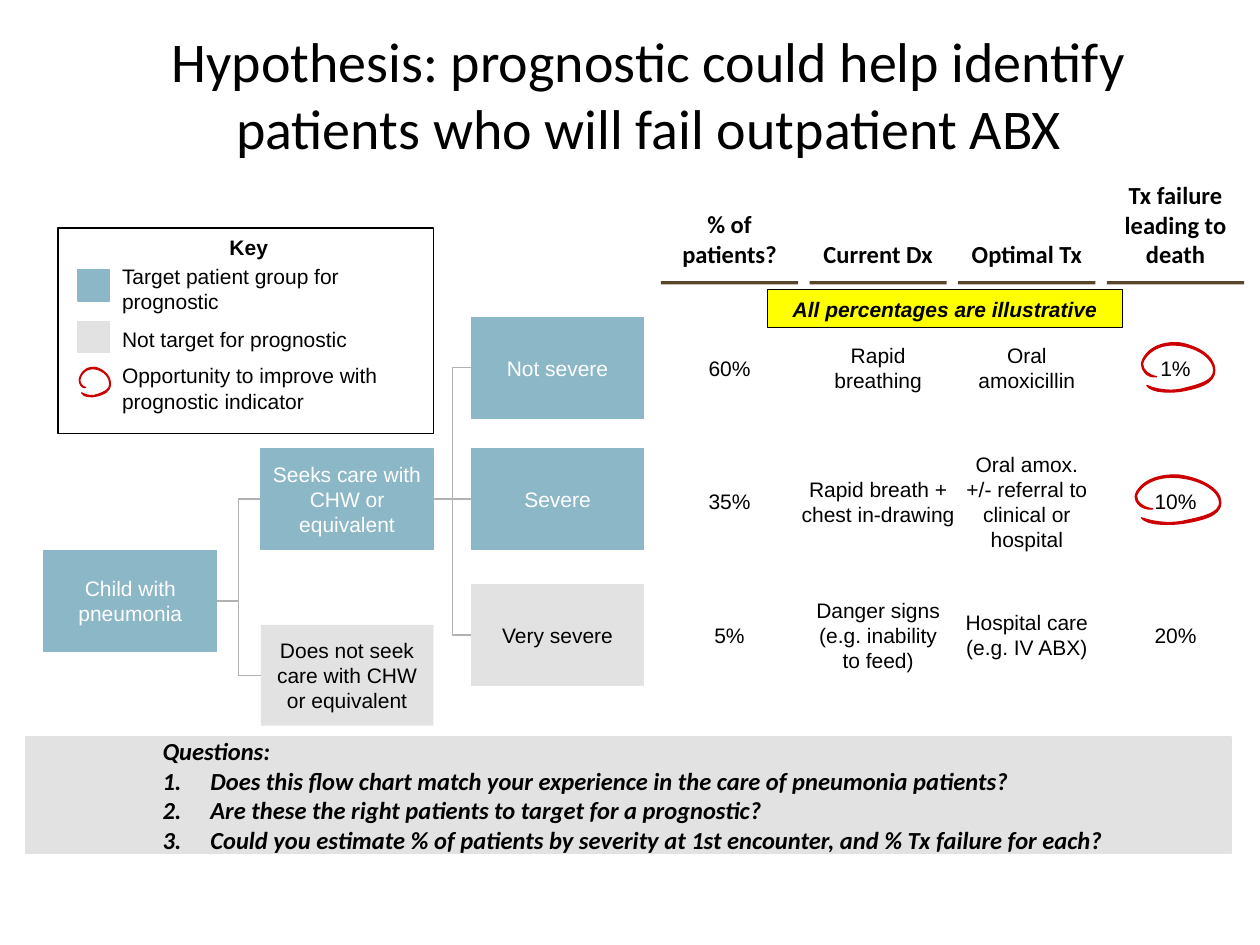
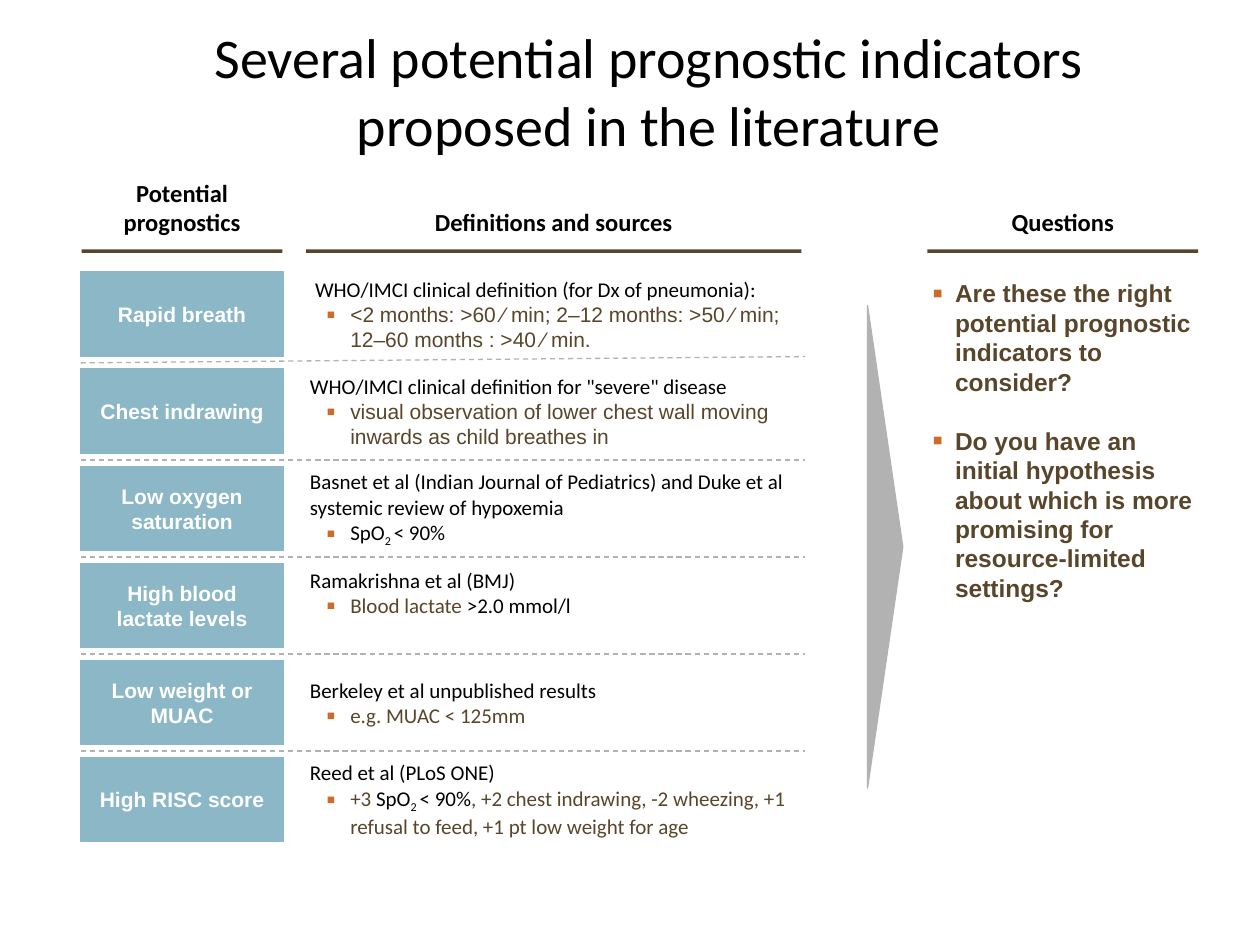
from dataclasses import dataclass
from lxml.etree import SubElement
from pptx import Presentation
from pptx.dml.color import RGBColor
from pptx.enum.dml import MSO_LINE
from pptx.enum.shapes import MSO_CONNECTOR as LINK, MSO_SHAPE as SHAPE
from pptx.enum.text import MSO_ANCHOR as ANCHOR, MSO_AUTO_SIZE as FIT, PP_ALIGN as ALIGN
from pptx.oxml.ns import qn
from pptx.util import Pt

PX = 9144  # EMU in one px, 100 px to the inch


@dataclass(frozen=True)
class Style:
    size: int
    font: str
    color: str
    bold: bool = False
    italic: bool = False
    baseline: int = 0


class Theme:
    black, white = "000000", "FFFFFF"
    target, other = "8CB7C7", "E2E2E2"
    rule, link, bullet = "59452A", "B2B2B2", "CE6B2A"
    mark, notice = "CC0000", "FFFF00"
    title = Style(32, "Calibri", black)
    header = Style(14, "Calibri", black, bold=True)
    body = Style(12, "Arial", black)
    on_target = Style(12, "Arial", white)
    indicator = Style(12, "Arial", white, bold=True)
    key = Style(12, "Arial", black, bold=True)
    banner = Style(12, "Arial", black, bold=True, italic=True)
    ask = Style(14, "Calibri", black, bold=True, italic=True)
    question = Style(14, "Arial", rule, bold=True)
    source = Style(12, "Calibri", black)
    subscript = Style(12, "Calibri", black, baseline=-25000)
    detail = Style(12, "Calibri", rule)
    detail_arial = Style(12, "Arial", rule)


def write(box, paras, inset=(5, 5, 5, 5), anchor=ANCHOR.MIDDLE, align=ALIGN.CENTER):
    """Each para is (spans, indent, hanging, marker, space before)."""
    frame = box.text_frame
    frame.word_wrap, frame.auto_size = True, FIT.NONE
    frame.vertical_anchor = anchor
    (frame.margin_left, frame.margin_top,
     frame.margin_right, frame.margin_bottom) = (n * PX for n in inset)
    for number, (spans, indent, hanging, marker, before) in enumerate(paras):
        para = frame.add_paragraph() if number else frame.paragraphs[0]
        para.alignment = align
        props = para._p.get_or_add_pPr()
        props.set("marL", str(indent * PX))
        props.set("indent", str(-hanging * PX))
        if marker == "1.":
            SubElement(props, qn("a:buAutoNum"), type="arabicPeriod")
        elif marker:
            color = SubElement(props, qn("a:buClr"))
            SubElement(color, qn("a:srgbClr"), val=Theme.bullet)
            SubElement(props, qn("a:buSzPct"), val="125000")
            SubElement(props, qn("a:buFont"), typeface="Arial")
            SubElement(props, qn("a:buChar"), char=marker)
        if before:
            para.space_before = Pt(before)
        for text, style in spans:
            span = para.add_run()
            span.text = text
            font = span.font
            font.name, font.size = style.font, Pt(style.size)
            font.bold, font.italic = style.bold, style.italic
            font.color.rgb = RGBColor.from_string(style.color)
            if style.baseline:
                span._r.get_or_add_rPr().set("baseline", str(style.baseline))


def add_box(page, at, fill=None, line=None, text="", style=Theme.body, **layout):
    place = [n * PX for n in at]
    if fill or line:
        box = page.shapes.add_shape(SHAPE.RECTANGLE, *place)
        box.shadow.inherit = False
        for part, color in ((box.fill, fill), (box.line.fill, line)):
            if color:
                part.solid()
                part.fore_color.rgb = RGBColor.from_string(color)
            else:
                part.background()
        if line:
            box.line.width = Pt(0.75)
    else:
        box = page.shapes.add_textbox(*place)
    if text:
        write(box, [([(text, style)], 0, 0, None, 0)], **layout)
    return box


deck = Presentation()
deck.slide_width, deck.slide_height = 1000 * PX, 750 * PX

# Titles
pages = []
for title, top in (
    ("Hypothesis: prognostic could help identify patients who will fail outpatient ABX", 34),
    ("Several potential prognostic indicators proposed in the literature", 31),
):
    page = deck.slides.add_slide(deck.slide_layouts[5])
    box = page.shapes.title
    box.left, box.top, box.width, box.height = (n * PX for n in (77, top, 876, 81))
    write(box, [([(title, Theme.title)], 0, 0, None, 0)], inset=(10, 5, 10, 5))
    pages.append(page)
flow, literature = pages

# Column headers, underlined by a hard shadow
columns = [524 + 118 * i for i in range(4)]
for page, text, left, top, width, bottom, side in (
    (flow, "% of patients?", columns[0], 156, 110, 223, 5),
    (flow, "Current Dx", columns[1], 156, 110, 223, 5),
    (flow, "Optimal Tx", columns[2], 156, 110, 223, 5),
    (flow, "Tx failure leading to death", columns[3], 132, 110, 223, 5),
    (literature, "Potential prognostics", 64, 131, 161, 198, 10),
    (literature, "Definitions and sources", 241, 154, 397, 198, 10),
    (literature, "Questions", 735, 154, 217, 198, 10),
):
    header = add_box(page, (left, top, width, bottom - top), Theme.white, None, text,
                     Theme.header, inset=(side, 10, side, 10), anchor=ANCHOR.BOTTOM)
    effects = header._element.spPr.find(qn("a:effectLst"))
    shadow = SubElement(effects, qn("a:outerShdw"), dist=str(Pt(2)), dir="5400000",
                        sx="99000", sy="100000", algn="ctr", rotWithShape="0")
    SubElement(shadow, qn("a:srgbClr"), val=Theme.rule)

# Patient flow
groups = []
for name, left, top, fill, line, style in (
    ("Child with pneumonia", 35, 437, Theme.target, Theme.target, Theme.on_target),
    ("Seeks care with CHW or equivalent", 207, 356, Theme.target, Theme.target,
     Theme.on_target),
    ("Does not seek care with CHW or equivalent", 207, 496, Theme.other, None, Theme.body),
    ("Not severe", 374, 252, Theme.target, Theme.target, Theme.on_target),
    ("Severe", 374, 356, Theme.target, Theme.target, Theme.on_target),
    ("Very severe", 374, 464, Theme.other, Theme.other, Theme.body),
):
    groups.append(add_box(flow, (left, top, 137, 80), fill, line, name, style))

child, seeks, stays, *severities = groups
connectors = []
for start, end in [(child, seeks), (child, stays)] + [(seeks, s) for s in severities]:
    link = flow.shapes.add_connector(LINK.ELBOW, 0, 0, 0, 0)
    link.begin_connect(start, 3)
    link.end_connect(end, 1)
    connectors.append(link)

# Figures per severity
for row, cells in enumerate((
    ("60%", "Rapid breathing", "Oral amoxicillin", "1%"),
    ("35%", "Rapid breath + chest in-drawing",
     "Oral amox. +/- referral to clinical or hospital", "10%"),
    ("5%", "Danger signs (e.g. inability to feed)", "Hospital care (e.g. IV ABX)", "20%"),
)):
    for column, (left, text) in enumerate(zip(columns, cells)):
        wide = (row, column) == (1, 1)
        spread, inset = (8, (0, 0, 0, 0)) if wide else (0, (5, 5, 5, 5))
        add_box(flow, (left - spread, 252 + 106 * row, 110 + 2 * spread, 80),
                text=text, inset=inset)

# Key
add_box(flow, (46, 181, 298, 163), None, Theme.black, "Key", Theme.key,
        inset=(10, 5, 5, 5), anchor=ANCHOR.TOP)
for top, square, color, text in (
    (206, 214, Theme.target, "Target patient group for prognostic"),
    (246, 255, Theme.other, "Not target for prognostic"),
    (285, None, None, "Opportunity to improve with prognostic indicator"),
):
    if color:
        add_box(flow, (62, square, 25, 25), color, color)
    add_box(flow, (87, top, 248, 46), text=text, inset=(10, 5, 10, 5), align=ALIGN.LEFT)

# Hand-drawn rings: a start, then Bezier triples on a 69 x 42 grid
ring_points = (
    (5, 35),
    (16, 39), (30, 40), (41, 37), (55, 34), (67, 31), (67, 23),
    (67, 15), (55, 5), (34, 3), (11, 1), (1, 14), (1, 18),
    (1, 23), (7, 27), (14, 28), (5, 29), (0, 23), (0, 18),
    (0, 14), (8, 0), (34, 1), (50, 3), (68, 11), (68, 23),
    (68, 34), (51, 37), (40, 39), (29, 41), (9, 41), (5, 35),
)
for left, top, width, height in ((906, 271, 59, 42), (901, 376, 69, 42), (63, 291, 25, 25)):
    outline = [((left + x * width / 69) * PX, (top + y * height / 42) * PX)
               for x, y in ring_points]
    builder = flow.shapes.build_freeform(*outline[0])
    builder.add_line_segments(outline[1:], close=True)
    ring = builder.convert_to_shape()
    segments = list(ring._element.iter(qn("a:lnTo")))
    for first in range(0, 30, 3):
        curve = segments[first]
        bend = curve.getparent().makeelement(qn("a:cubicBezTo"))
        curve.addprevious(bend)
        for segment in segments[first:first + 3]:
            bend.append(segment[0])
            segment.getparent().remove(segment)
    ring.shadow.inherit = False
    ring.fill.solid()
    ring.fill.fore_color.rgb = RGBColor.from_string(Theme.mark)
    ring.line.color.rgb = RGBColor.from_string(Theme.mark)
    ring.line.width = Pt(0.75)

# Notice and questions band
add_box(flow, (609, 230, 282, 30), Theme.notice, Theme.black,
        "All percentages are illustrative", Theme.banner)
band = add_box(flow, (20, 585, 957, 92), Theme.other, Theme.other)
asks = [([("Questions:", Theme.ask)], 0, 0, None, 0)]
for text in (
    "Does this flow chart match your experience in the care of pneumonia patients?",
    "Are these the right patients to target for a prognostic?",
    "Could you estimate % of patients by severity at 1st encounter, and % Tx failure for each?",
):
    asks.append(([(text, Theme.ask)], 38, 38, "1.", 0))
write(band, asks, inset=(109, 5, 0, 5), align=ALIGN.LEFT)

# Indicators with their definitions
spo2 = [("SpO", Theme.source), ("2 ", Theme.subscript), ("< 90%", Theme.source)]
indicators = (
    ("Rapid breath", "WHO/IMCI clinical definition (for Dx of pneumonia):",
     [("<2 months: >60 ⁄ min; 2–12 months: >50 ⁄ min; 12–60 months : >40 ⁄ min.",
       Theme.detail_arial)], 4, 5),
    ("Chest indrawing", 'WHO/IMCI clinical definition for "severe" disease',
     [("visual observation of lower chest wall moving inwards as child breathes in",
       Theme.detail_arial)], 0, 5),
    ("Low oxygen saturation",
     "Basnet et al (Indian Journal of Pediatrics) and Duke et al systemic review of hypoxemia",
     spo2, 0, 5),
    ("High blood lactate levels", "Ramakrishna et al (BMJ)",
     [("Blood lactate ", Theme.detail), (">2.0 mmol/l", Theme.source)], 0, 25),
    ("Low weight or MUAC", "Berkeley et al unpublished results",
     [("e.g. MUAC < 125mm", Theme.detail)], 0, 5),
    ("High RISC score", "Reed et al (PLoS ONE)",
     [("+3 ", Theme.detail), *spo2,
      (", +2 chest indrawing, -2 wheezing, +1 refusal to feed, +1 pt low weight for age",
       Theme.detail)], 0, 5),
)
for row, (name, source, details, indent, bottom) in enumerate(indicators):
    top = 216 + 77 * row
    add_box(literature, (64, top, 161, 67), Theme.target, Theme.target, name,
            Theme.indicator, inset=(10, 10, 10, 10))
    definition = add_box(literature, (241, top, 411, 67))
    write(definition, [([(source, Theme.source)], indent, 0, None, 0),
                       (details, 32, 19, "▪", 0)],
          inset=(5, 5, 5, bottom), align=ALIGN.LEFT)
    if row:
        end = top - 5 if row > 1 else top - 10
        divider = literature.shapes.add_connector(
            LINK.STRAIGHT, 64 * PX, (top - 5) * PX, 639 * PX, end * PX)
        divider.line.dash_style = MSO_LINE.DASH
        connectors.append(divider)

# Arrow wedge and questions
wedge = literature.shapes.add_shape(
    SHAPE.ISOSCELES_TRIANGLE, *(n * PX for n in (511, 420, 383, 28)))
wedge.rotation = 90
wedge.shadow.inherit = False
wedge.fill.solid()
wedge.fill.fore_color.rgb = RGBColor.from_string(Theme.link)
wedge.line.color.rgb = RGBColor.from_string(Theme.link)
wedge.line.width = Pt(0.75)
questions = add_box(literature, (735, 216, 217, 433))
write(questions, [
    ([("Are these the right potential prognostic indicators to consider?", Theme.question)],
     18, 18, "▪", 0),
    ([("Do you have an initial hypothesis about which is more promising for "
       "resource-limited settings?", Theme.question)], 18, 18, "▪", 17),
], anchor=ANCHOR.TOP, align=ALIGN.LEFT)

# Connector look
for connector in connectors:
    connector.line.color.rgb = RGBColor.from_string(Theme.link)
    connector.line.width = Pt(0.75)
    SubElement(connector._element.spPr, qn("a:effectLst"))

deck.save("out.pptx")
